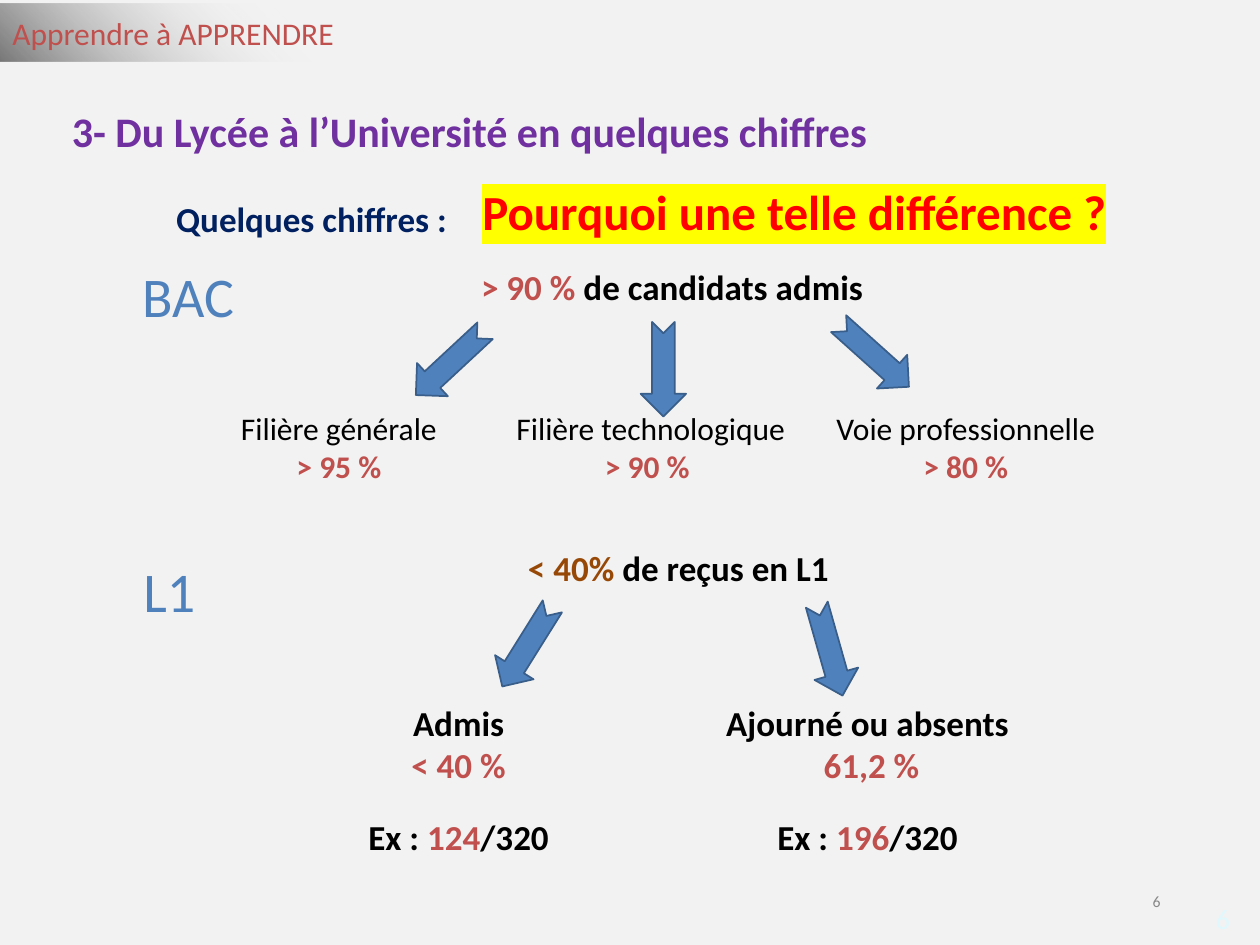
from dataclasses import dataclass
from typing import Optional

from lxml.etree import SubElement
from pptx import Presentation
from pptx.dml.color import RGBColor
from pptx.enum.shapes import MSO_SHAPE as Shape
from pptx.enum.text import MSO_ANCHOR as Anchor, MSO_AUTO_SIZE as AutoSize, PP_ALIGN as Align
from pptx.oxml import parse_xml
from pptx.oxml.ns import nsdecls, qn
from pptx.util import Inches, Pt

COLORS = {
    "page": "F2F2F2",
    "black": "000000",
    "red": "C0504D",
    "bright_red": "FF0000",
    "blue": "4F81BD",
    "edge": "395E89",
    "navy": "002060",
    "purple": "7030A0",
    "brown": "974806",
    "gray": "888888",
    "pale": "E0F8FC",
    "yellow": "FFFF00",
}
FONT = "Calibri"
BANNER_FILL = f"""<a:gradFill {nsdecls("a")} rotWithShape="1"><a:gsLst>
<a:gs pos="0"><a:srgbClr val="010101"><a:alpha val="51000"/></a:srgbClr></a:gs>
<a:gs pos="60000"><a:srgbClr val="FEFEFE"><a:alpha val="0"/></a:srgbClr></a:gs>
<a:gs pos="100000"><a:srgbClr val="FEFEFE"><a:alpha val="0"/></a:srgbClr></a:gs>
</a:gsLst><a:path path="circle"><a:fillToRect t="100000" r="100000"/></a:path></a:gradFill>"""


@dataclass
class Span:
    text: str
    color: str = "black"
    bold: bool = True
    highlight: Optional[str] = None


@dataclass
class Arrow:
    left: float
    top: float
    angle: float


@dataclass
class Track:
    left: float
    width: float
    name: str
    rate: str


@dataclass
class Outcome:
    left: float
    width: float
    name: str
    rate: str
    count: str


ARROWS = [
    Arrow(3.2, 2.7, 137.1),
    Arrow(4.89, 2.75, 90),
    Arrow(6.56, 2.64, 41.9),
    Arrow(3.81, 4.95, 122),
    Arrow(6.21, 4.98, 74.2),
]
TRACKS = [
    Track(1.77, 1.84, "Filière générale", "> 95 %"),
    Track(3.96, 2.41, "Filière technologique", "> 90 % "),
    Track(6.5, 2.33, "Voie professionnelle", "> 80 %"),
]
OUTCOMES = [
    Outcome(2.74, 1.8, "Admis", "< 40 %", "124"),
    Outcome(5.64, 2.49, "Ajourné ou absents", " 61,2 %", "196"),
]


def rgb(name: str) -> RGBColor:
    return RGBColor.from_string(COLORS[name])


def place(shape, left: float, top: float, width: float, height: float) -> None:
    shape.left, shape.top = Inches(left), Inches(top)
    shape.width, shape.height = Inches(width), Inches(height)


def write(shape, lines: list[list[Span]], *, size: float, align=Align.LEFT,
          anchor=Anchor.TOP, gaps: Optional[dict[int, float]] = None) -> None:
    frame = shape.text_frame
    frame.word_wrap = True
    frame.auto_size = AutoSize.NONE
    frame.vertical_anchor = anchor
    for index, spans in enumerate(lines):
        para = frame.paragraphs[0] if index == 0 else frame.add_paragraph()
        para.alignment = align
        para.space_before = Pt((gaps or {}).get(index, 0))
        for span in spans:
            run = para.add_run()
            run.text = span.text
            font = run.font
            font.name, font.size, font.bold = FONT, Pt(size), span.bold
            font.color.rgb = rgb(span.color)
            if span.highlight:
                properties = run._r.get_or_add_rPr()
                mark = SubElement(properties, qn("a:highlight"))
                SubElement(mark, qn("a:srgbClr")).set("val", COLORS[span.highlight])
                properties.find(qn("a:solidFill")).addnext(mark)


def add_text(page, left: float, top: float, width: float, height: float,
             *lines: list[Span], **style) -> None:
    box = page.shapes.add_textbox(Inches(left), Inches(top), Inches(width), Inches(height))
    write(box, list(lines), **style)


def add_banner(page) -> None:
    banner = page.shapes.add_shape(Shape.RECTANGLE, 0, Inches(0.03), Inches(3.9), Inches(0.46))
    banner.shadow.inherit = False
    banner.line.fill.background()
    banner.fill.background()
    properties = banner._element.spPr
    properties.replace(properties.find(qn("a:noFill")), parse_xml(BANNER_FILL))
    write(banner, [[Span("Apprendre à APPRENDRE", "red", False)]], size=18, anchor=Anchor.MIDDLE)


def add_arrow(page, arrow: Arrow) -> None:
    shape = page.shapes.add_shape(Shape.NOTCHED_RIGHT_ARROW, Inches(arrow.left),
                                  Inches(arrow.top), Inches(0.75), Inches(0.36))
    shape.rotation = arrow.angle
    shape.shadow.inherit = False
    shape.fill.solid()
    shape.fill.fore_color.rgb = rgb("blue")
    shape.line.color.rgb = rgb("edge")
    shape.line.width = Pt(1)


def add_track(page, track: Track) -> None:
    add_text(page, track.left, 3.2, track.width, 0.71,
             [Span(track.name, bold=False)], [Span(track.rate, "red")],
             size=18, align=Align.CENTER)


def add_outcome(page, outcome: Outcome) -> None:
    add_text(page, outcome.left, 5.52, outcome.width, 1.35,
             [Span(outcome.name)], [Span(outcome.rate, "red")],
             [Span("Ex : "), Span(outcome.count, "red"), Span("/320")],
             size=20, align=Align.CENTER, gaps={2: 17})


def main() -> None:
    deck = Presentation()
    deck.slide_width, deck.slide_height = Inches(10), Inches(7.5)
    page = deck.slides.add_slide(deck.slide_layouts[5])
    page.background.fill.solid()
    page.background.fill.fore_color.rgb = rgb("page")

    title = page.shapes.title
    place(title, 0.47, 0.79, 8.36, 0.5)
    write(title, [[Span("3- Du Lycée à l’Université en quelques chiffres", "purple")]], size=24)

    add_banner(page)
    add_text(page, 1.3, 1.52, 2.42, 0.44, [Span("Quelques chiffres :", "navy")], size=20)
    add_text(page, 3.72, 2.06, 3.83, 0.44,
             [Span("> 90 %", "red"), Span(" de candidats admis")], size=20)
    add_text(page, 1.03, 2.03, 2.13, 0.64, [Span("BAC", "blue", False)], size=32)
    for track in TRACKS:
        add_track(page, track)
    for arrow in ARROWS:
        add_arrow(page, arrow)
    add_text(page, 1.04, 4.37, 2.22, 0.64, [Span("L1", "blue", False)], size=32)
    add_text(page, 3.47, 4.29, 3.83, 0.44,
             [Span("< 40% ", "brown"), Span("de reçus en L1")], size=20, align=Align.CENTER)
    for outcome in OUTCOMES:
        add_outcome(page, outcome)
    add_text(page, 3.73, 1.39, 5.29, 0.57,
             [Span("Pourquoi une telle différence ?", "bright_red", highlight="yellow")], size=28)
    add_text(page, 7.06, 6.95, 2.25, 0.4, [Span("6", "gray", False)],
             size=9, align=Align.RIGHT, anchor=Anchor.MIDDLE)
    add_text(page, 9.36, 7.09, 0.5, 0.4, [Span("6", "pale", False)],
             size=16, align=Align.RIGHT, anchor=Anchor.MIDDLE)
    deck.save("out.pptx")


if __name__ == "__main__":
    main()
